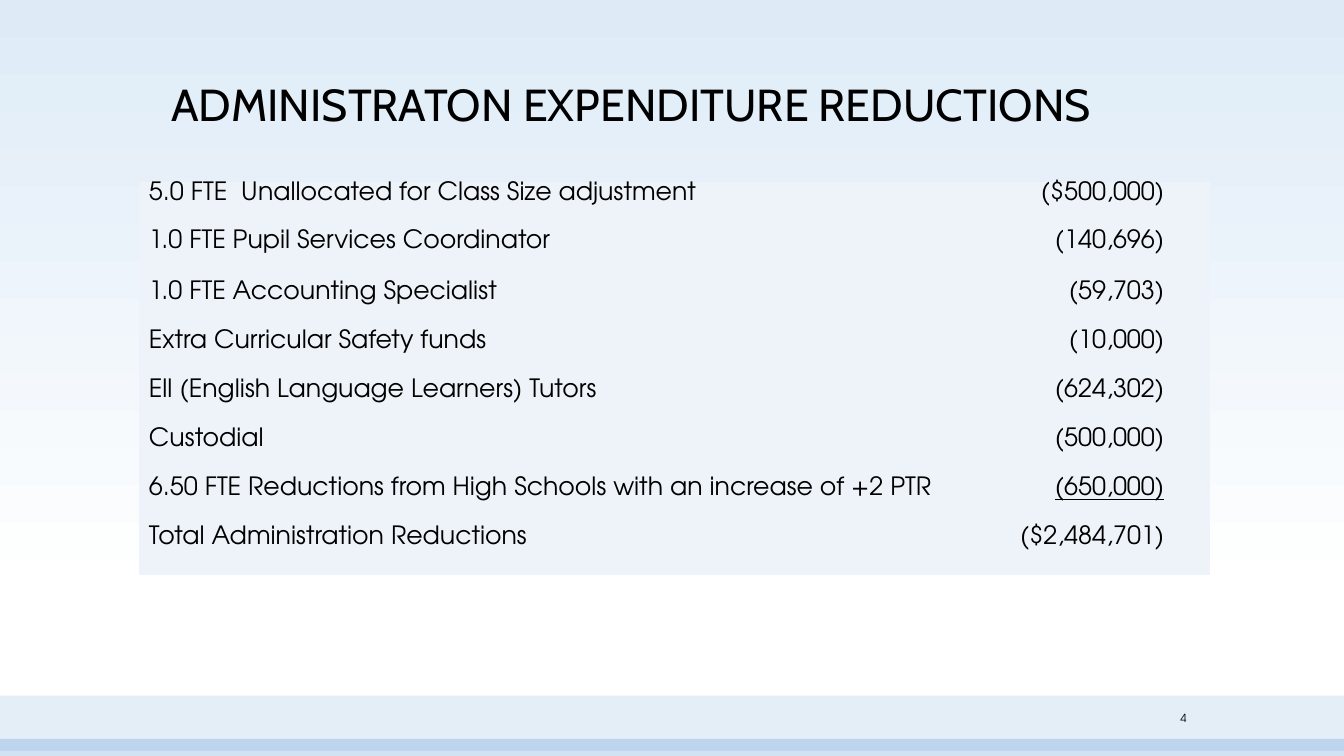
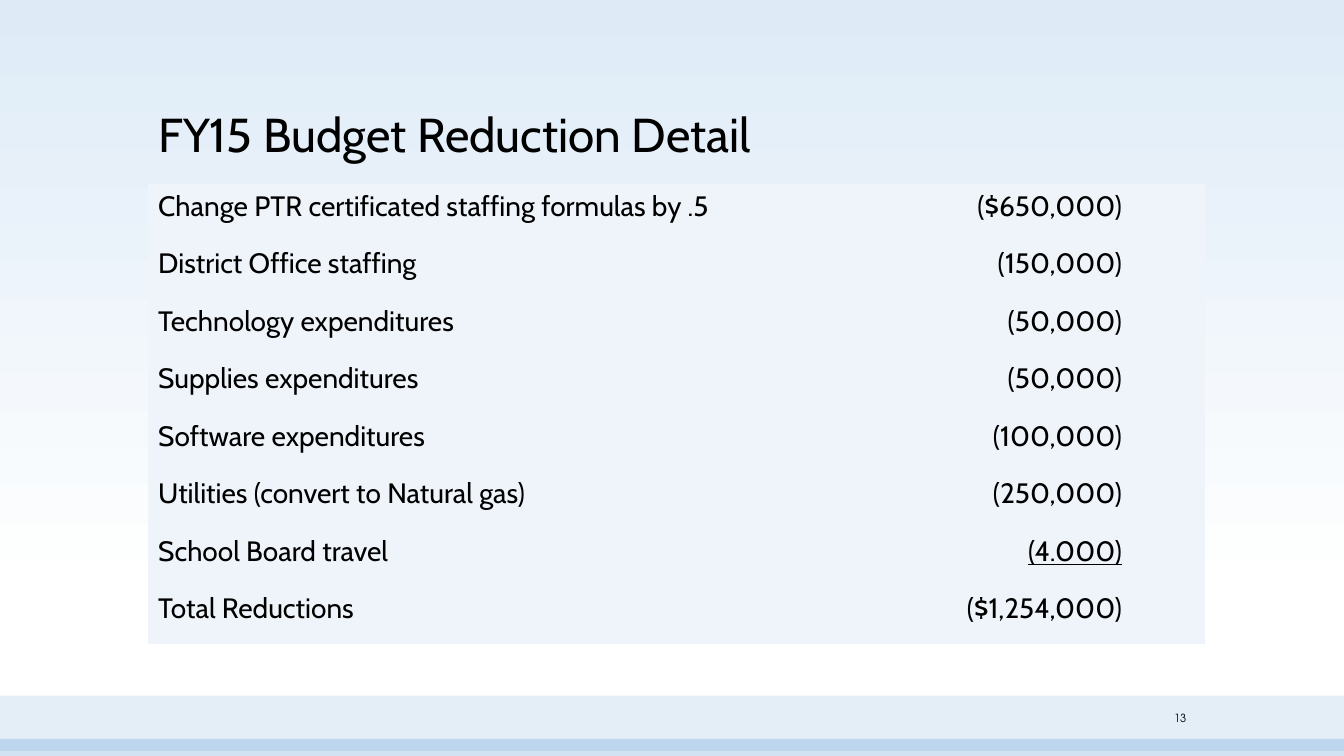
from lxml import etree
from pptx import Presentation
from pptx.dml.color import RGBColor
from pptx.enum.shapes import MSO_SHAPE
from pptx.enum.text import MSO_ANCHOR, MSO_AUTO_SIZE, PP_ALIGN
from pptx.oxml.ns import qn
from pptx.util import Pt

COLORS = {"text": "000000", "band": "5B9BD5", "sky": "DEEBF7", "white": "FFFFFF"}
HEAD_FONT, BODY_FONT = "Cabin", "TeX Gyre Adventor"
PLAIN_TABLE = "{2D5ABB26-0587-4C30-8999-92F81FD0307C}"
INSET = 7.2

SLIDES = [
    dict(
        number="4", title="ADMINISTRATON EXPENDITURE REDUCTIONS",
        title_box=(115.2, 28, 748.8, 69.2), title_size=32,
        table_at=(99.2, 129.8), cols=(622.2, 142.8), heights=[34.5, 36.5] + [35] * 6,
        font=BODY_FONT, size=18, top=0, amount_width=103, fill="EDF3F9",
        rows=[
            ("5.0 FTE  Unallocated for Class Size adjustment", "($500,000)"),
            ("1.0 FTE Pupil Services Coordinator", "(140,696)"),
            ("1.0 FTE Accounting Specialist", "(59,703)"),
            ("Extra Curricular Safety funds", "(10,000)"),
            ("Ell (English Language Learners) Tutors", "(624,302)"),
            ("Custodial", "(500,000)"),
            ("6.50 FTE Reductions from High Schools with an increase of +2 PTR", "(650,000)"),
            ("Total Administration Reductions", "($2,484,701)"),
        ],
    ),
    dict(
        number="13", title="FY15 Budget Reduction Detail",
        title_box=(105.8, 34.6, 748.8, 85.6), title_size=34,
        table_at=(105.8, 131.6), cols=(577.4, 177.8), heights=[41.1] * 8,
        font=HEAD_FONT, size=20, top=3.6, amount_width=111, fill="EEF4FA",
        rows=[
            ("Change PTR certificated staffing formulas by .5", "($650,000)"),
            ("District Office staffing", "(150,000)"),
            ("Technology expenditures", "(50,000)"),
            ("Supplies expenditures", "(50,000)"),
            ("Software expenditures", "(100,000)"),
            ("Utilities (convert to Natural gas)", "(250,000)"),
            ("School Board travel", "(4.000)"),
            ("Total Reductions", "($1,254,000)"),
        ],
    ),
]


def write(tf, text, font=BODY_FONT, size=18, align=PP_ALIGN.LEFT, underline=None):
    p = tf.paragraphs[0]
    p.alignment = align
    r = p.add_run()
    r.text = text
    r.font.name, r.font.size, r.font.underline = font, Pt(size), underline
    r.font.color.rgb = RGBColor.from_string(COLORS["text"])
    return p


prs = Presentation()
prs.slide_width, prs.slide_height = Pt(960), Pt(540)
master = prs.slide_master

# Shared background
bg = master.background.fill
bg.gradient()
bg.gradient_angle = 270
for stop, color, position in zip(bg.gradient_stops, ("sky", "white"), (0, 0.79)):
    stop.color.rgb = RGBColor.from_string(COLORS[color])
    stop.position = position

slides = [prs.slides.add_slide(prs.slide_layouts[5]) for _ in SLIDES]

# Shared bottom bands, drawn once and moved to the master
for i, (top, height, alpha) in enumerate([(496.8, 39.6, 17), (527.8, 12.2, 28)]):
    band = slides[0].shapes.add_shape(MSO_SHAPE.RECTANGLE, 0, Pt(top), Pt(960), Pt(height))
    band.name = f"Bottom band {i + 1}"
    band.shadow.inherit = False
    band.line.fill.background()
    band.fill.solid()
    band.fill.fore_color.rgb = RGBColor.from_string(COLORS["band"])
    color = band._element.spPr.find(".//" + qn("a:srgbClr"))
    etree.SubElement(color, qn("a:alpha"), val=str(alpha * 1000))
    band._element.nvSpPr.cNvPr.set("id", str(101 + i))
    master.shapes._spTree.insert(2 + i, band._element)

for s, d in zip(slides, SLIDES):
    title = s.shapes.title
    title.left, title.top, title.width, title.height = map(Pt, d["title_box"])
    tf = title.text_frame
    tf.word_wrap, tf.auto_size = True, MSO_AUTO_SIZE.NONE
    tf.vertical_anchor = MSO_ANCHOR.BOTTOM
    write(tf, d["title"], font=HEAD_FONT, size=d["title_size"]).line_spacing = 0.9

    number = s.shapes.add_textbox(Pt(804.2), Pt(503.3), Pt(50.4), Pt(18.7))
    tf = number.text_frame
    tf.word_wrap, tf.vertical_anchor = True, MSO_ANCHOR.MIDDLE
    write(tf, d["number"], size=8, align=PP_ALIGN.RIGHT)

    left, top = d["table_at"]
    frame = s.shapes.add_table(len(d["rows"]), 2, Pt(left), Pt(top),
                               Pt(sum(d["cols"])), Pt(sum(d["heights"])))
    table = frame.table
    table.first_row = table.horz_banding = False
    table._tbl.tblPr.find(qn("a:tableStyleId")).text = PLAIN_TABLE
    for col, width in zip(table.columns, d["cols"]):
        col.width = Pt(width)
    for i, (label, amount) in enumerate(d["rows"]):
        table.rows[i].height = Pt(d["heights"][i])
        label_cell, amount_cell = table.cell(i, 0), table.cell(i, 1)
        for cell in (label_cell, amount_cell):
            cell.fill.solid()
            cell.fill.fore_color.rgb = RGBColor.from_string(d["fill"])
            cell.margin_top = Pt(d["top"])
        style = dict(font=d["font"], size=d["size"])
        write(label_cell.text_frame, label, **style)
        if i == len(d["rows"]) - 2:
            # An underlined tab rules off the column above the total
            p = write(amount_cell.text_frame, "\t" + amount, underline=True, **style)
            tabs = etree.SubElement(p._p.get_or_add_pPr(), qn("a:tabLst"))
            etree.SubElement(tabs, qn("a:tab"), pos=str(Pt(d["amount_width"])), algn="r")
        else:
            amount_cell.margin_left = 0
            amount_cell.margin_right = Pt(d["cols"][1] - INSET - d["amount_width"])
            write(amount_cell.text_frame, amount, align=PP_ALIGN.RIGHT, **style)

prs.save("out.pptx")
